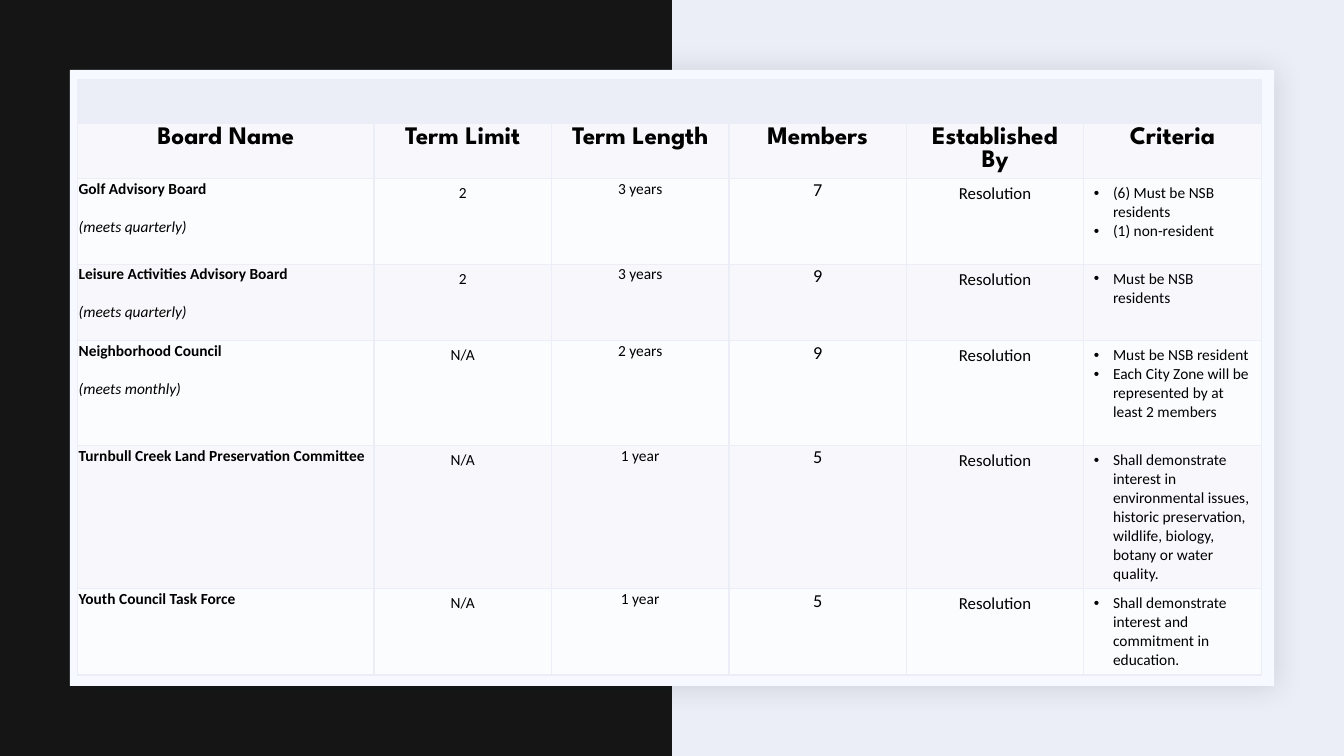
from collections import namedtuple

from lxml import etree
from pptx import Presentation
from pptx import util as u
from pptx.dml.color import RGBColor
from pptx.enum import shapes, text
from pptx.oxml import ns

WIDTH, HEIGHT = u.Inches(13.33), u.Inches(7.5)

BLACK = RGBColor(0x00, 0x00, 0x00)
DARK = RGBColor(0x14, 0x15, 0x14)
PALE = RGBColor(0xEC, 0xEE, 0xF7)
PANEL = RGBColor(0xF6, 0xF9, 0xFF)
SHADOW = RGBColor(0x1F, 0x21, 0x25)
ROW_FILLS = (RGBColor(0xF8, 0xF8, 0xFC), RGBColor(0xFB, 0xFC, 0xFD))

HEADING_FONT, BODY_FONT = "League Spartan", "Calibri"
LEFT, CENTER = text.PP_ALIGN.LEFT, text.PP_ALIGN.CENTER

# Table grid in inches: a wide name column, then five equal ones
COLUMNS = [2.94] + [1.76] * 5
ROWS = [0.42, 0.56, 0.85, 0.76, 1.04, 1.42, 0.85]

# How each body column is set
ColumnStyle = namedtuple("ColumnStyle", "size align tight bullet")
COLUMN_STYLES = (
    ColumnStyle(11, LEFT, True, False),
    ColumnStyle(11, CENTER, False, False),
    ColumnStyle(11, CENTER, True, False),
    ColumnStyle(13, CENTER, True, False),
    ColumnStyle(12, CENTER, False, False),
    ColumnStyle(11, LEFT, False, True),
)

HEADINGS = ("Board Name", "Term Limit", "Term Length", "Members",
            "Established By", "Criteria")
BOARDS = (
    (("Golf Advisory Board", "(meets quarterly)"), "2", "3 years", "7",
     ("(6) Must be NSB residents", "(1) non-resident")),
    (("Leisure Activities Advisory Board", "(meets quarterly)"),
     "2", "3 years", "9", ("Must be NSB residents",)),
    (("Neighborhood Council", "(meets monthly)"), "N/A", "2 years", "9",
     ("Must be NSB resident",
      "Each City Zone will be represented by at least 2 members")),
    (("Turnbull Creek Land Preservation Committee",), "N/A", "1 year", "5",
     ("Shall demonstrate interest in environmental issues, historic "
      "preservation, wildlife, biology, botany or water quality.",)),
    (("Youth Council Task Force",), "N/A", "1 year", "5",
     ("Shall demonstrate interest and commitment in education.",)),
)


def add_child(parent, tag, **attributes):
    child = etree.SubElement(parent, ns.qn(tag))
    for name, value in attributes.items():
        child.set(name, str(value))
    return child


def add_block(slide, left, top, width, height, color):
    """Add a plain rectangle placed by shares of the slide."""
    shape = slide.shapes.add_shape(
        shapes.MSO_SHAPE.RECTANGLE, int(WIDTH * left), int(HEIGHT * top),
        int(WIDTH * width), int(HEIGHT * height))
    shape.shadow.inherit = False
    shape.fill.solid()
    shape.fill.fore_color.rgb = color
    shape.line.fill.background()
    return shape


def add_soft_shadow(shape):
    effects = shape.element.spPr.find(ns.qn("a:effectLst"))
    shadow = add_child(effects, "a:outerShdw", blurRad=u.Pt(20),
                       dist=u.Pt(2), dir=45 * 60000, algn="tl",
                       rotWithShape=0)
    color = add_child(shadow, "a:srgbClr", val=SHADOW)
    add_child(color, "a:alpha", val=15000)


def style_cell(cell, fill, bottom=1):
    """Border the cell on four sides, then fill it."""
    properties = cell._tc.get_or_add_tcPr()
    for side, points in (("L", 1), ("R", 1), ("T", 1), ("B", bottom)):
        line = add_child(properties, "a:ln" + side, w=u.Pt(points))
        add_child(add_child(line, "a:solidFill"), "a:srgbClr", val=PALE)
    cell.fill.solid()
    cell.fill.fore_color.rgb = fill


def add_run(paragraph, words, size, font=BODY_FONT, bold=False, italic=False):
    run = paragraph.add_run()
    run.text = words
    run.font.name, run.font.size = font, u.Pt(size)
    run.font.bold, run.font.italic = bold, italic
    run.font.color.rgb = BLACK


def add_bullet(paragraph):
    properties = paragraph._p.get_or_add_pPr()
    indent = u.Inches(0.19)
    properties.set("marL", str(indent))
    properties.set("indent", str(-indent))
    add_child(properties, "a:buFont", typeface="Arial")
    add_child(properties, "a:buChar", char="•")


def fill_body_cell(cell, lines, style, is_name):
    if style.tight:
        cell.margin_left = cell.margin_right = u.Inches(0.01)
        cell.margin_top, cell.margin_bottom = u.Inches(0.01), 0
    frame = cell.text_frame
    for index, line in enumerate(lines):
        paragraph = frame.add_paragraph() if index else frame.paragraphs[0]
        paragraph.alignment = style.align
        if is_name and index:
            paragraph.space_before = u.Pt(13.5)
        if style.bullet:
            add_bullet(paragraph)
        add_run(paragraph, line, style.size, bold=is_name and index == 0,
                italic=is_name and index > 0)


def add_board_table(slide):
    table = slide.shapes.add_table(
        len(ROWS), len(COLUMNS), u.Inches(0.77), u.Inches(0.79),
        u.Inches(sum(COLUMNS)), u.Inches(sum(ROWS))).table
    table.first_row = table.horz_banding = False
    for column, width in zip(table.columns, COLUMNS):
        column.width = u.Inches(width)
    for row, height in zip(table.rows, ROWS):
        row.height = u.Inches(height)

    # Empty band and headings
    for index, heading in enumerate(HEADINGS):
        style_cell(table.cell(0, index), PALE, bottom=3)
        cell = table.cell(1, index)
        style_cell(cell, ROW_FILLS[0])
        paragraph = cell.text_frame.paragraphs[0]
        paragraph.alignment = CENTER
        add_run(paragraph, heading, 18, HEADING_FONT, bold=True)

    # One row per board
    for row, (name, limit, length, members, criteria) in enumerate(BOARDS, 2):
        contents = (name, (limit,), (length,), (members,), ("Resolution",),
                    criteria)
        for index, lines in enumerate(contents):
            cell = table.cell(row, index)
            style_cell(cell, ROW_FILLS[(row + 1) % 2])
            fill_body_cell(cell, lines, COLUMN_STYLES[index], index == 0)


def main():
    presentation = Presentation()
    presentation.slide_width, presentation.slide_height = WIDTH, HEIGHT
    slide = presentation.slides.add_slide(presentation.slide_layouts[6])

    # Backdrop: pale slide, dark left half, raised panel
    slide.background.fill.solid()
    slide.background.fill.fore_color.rgb = PALE
    add_block(slide, 0, 0, 0.5, 1, DARK)
    panel = add_block(slide, 0.052, 0.0925, 0.896, 0.815, PANEL)
    add_soft_shadow(panel)

    add_board_table(slide)
    presentation.save("out.pptx")


if __name__ == "__main__":
    main()
